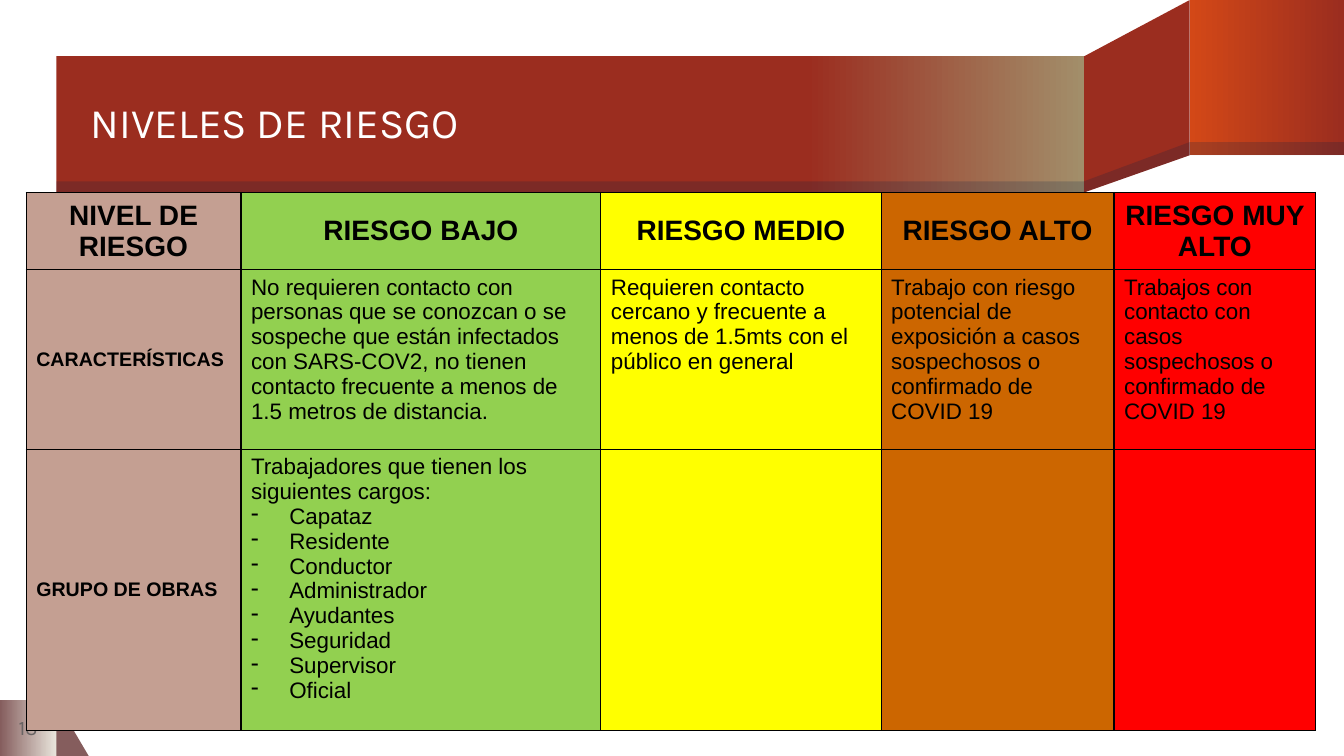
"""Build the risk level slide with its ribbon banner and table."""
from copy import deepcopy
from dataclasses import dataclass

from lxml.etree import SubElement
from pptx import Presentation
from pptx.dml.color import RGBColor as RGB
from pptx.enum.shapes import MSO_SHAPE as Kind
from pptx.enum.text import MSO_ANCHOR as Anchor, PP_ALIGN as Align
from pptx.oxml.ns import qn
from pptx.util import Inches, Pt


@dataclass(frozen=True)
class Theme:
    rust: str = "9B2D1F"
    flame: str = "D34817"
    sand: str = "A28E6A"
    plum: str = "855D5D"
    cream: str = "E9E5DC"
    shade: str = "001F46"
    white: str = "FFFFFF"
    black: str = "000000"
    gray: str = "696464"
    levels: tuple = ("C49F92", "92D050", "FFFF00", "CC6600", "FF0000")
    title: float = 30
    number: float = 14.7
    head: float = 20
    label: float = 14
    body: float = 16


def write(frame, text, size, color, font="Arial", bold=False, align=Align.LEFT, space=None, bullets=()):
    """Fill a text frame with one paragraph and optional dashed items."""
    frame.word_wrap = True
    for row, line in enumerate((text, *bullets)):
        para = frame.add_paragraph() if row else frame.paragraphs[0]
        para.alignment = align
        if space:
            para.line_spacing = space
        run = para.add_run()
        run.text = line
        run.font.size, run.font.name, run.font.bold = Pt(size), font, bold
        run.font.color.rgb = RGB.from_string(color)
        if row:
            props = para._p.get_or_add_pPr()
            props.set("marL", str(Inches(0.38)))
            props.set("indent", str(-Inches(0.38)))
            SubElement(props, qn("a:buChar"), char="-")


def paint(shape, color, end=None, hold=None, alpha=None):
    """Give a shape a flat, clear or graded fill without line or shadow."""
    shape.shadow.inherit = False
    shape.line.fill.background()
    if end:
        shape.fill.gradient()
        shape.fill.gradient_angle = 0
        for stop, tone in zip(shape.fill.gradient_stops, (color, end)):
            stop.color.rgb = RGB.from_string(tone)
    else:
        shape.fill.solid()
        shape.fill.fore_color.rgb = RGB.from_string(color)
    if hold:
        first = next(shape._element.iter(qn("a:gs")))
        middle = deepcopy(first)
        middle.set("pos", str(hold * 1000))
        first.addnext(middle)
    if alpha:
        tone = next(shape._element.iter(qn("a:srgbClr")))
        SubElement(tone, qn("a:alpha"), val=str(alpha * 1000))


theme = Theme()
deck = Presentation()
deck.slide_width, deck.slide_height = Inches(13.33), Inches(7.5)
slide = deck.slides.add_slide(deck.slide_layouts[6])
shapes = slide.shapes

dark = dict(color=theme.shade, alpha=20)
parts = [
    (Kind.RIGHT_TRIANGLE, (0.55, 6.94, 0.33, 0.56), dict(color=theme.plum)),
    (Kind.RECTANGLE, (0, 6.94, 0.56, 0.56), dict(color=theme.plum, end=theme.cream)),
    (None, ((11.8, 0), (10.75, 0.56), (10.75, 1.91), (11.8, 1.54)), dict(color=theme.rust)),
    (Kind.RECTANGLE, (11.8, 0, 1.53, 1.54), dict(color=theme.flame, end=theme.rust)),
    (Kind.RECTANGLE, (0.56, 0.56, 10.19, 1.35), dict(color=theme.rust, end=theme.sand, hold=73)),
    (None, ((11.8, 1.41), (10.75, 1.8), (10.75, 1.91), (11.8, 1.54)), dark),
    (Kind.RECTANGLE, (11.8, 1.41, 1.53, 0.13), dark),
    (Kind.RECTANGLE, (0.56, 1.8, 10.19, 0.11), dark),
]
for kind, place, look in parts:
    if kind:
        part = shapes.add_shape(kind, *map(Inches, place))
    else:
        points = [(Inches(x), Inches(y)) for x, y in place]
        path = shapes.build_freeform(*points[0])
        path.add_line_segments(points[1:], close=True)
        part = path.convert_to_shape()
    paint(part, **look)

labels = [
    ((0.9, 0.57, 9.85, 1.34), "NIVELES DE RIESGO", dict(size=theme.title, color=theme.white, space=0.9)),
    ((0, 6.94, 0.56, 0.56), "13", dict(size=theme.number, color=theme.gray, align=Align.CENTER)),
]
for place, text, look in labels:
    frame = shapes.add_textbox(*map(Inches, place)).text_frame
    frame.margin_left = frame.margin_right = frame.margin_top = frame.margin_bottom = 0
    frame.vertical_anchor = Anchor.MIDDLE
    write(frame, text, font="Karla", **look)

rows = [
    ("NIVEL DE RIESGO", "RIESGO BAJO", "RIESGO MEDIO", "RIESGO ALTO", "RIESGO MUY ALTO"),
    (
        "CARACTERÍSTICAS",
        "No requieren contacto con personas que se conozcan o se sospeche que están infectados "
        "con SARS-COV2, no tienen contacto frecuente a menos de 1.5 metros de distancia.",
        "Requieren contacto cercano y frecuente a menos de 1.5mts con el público en general",
        "Trabajo con riesgo potencial de exposición a casos sospechosos o confirmado de COVID 19",
        "Trabajos con contacto con casos sospechosos o confirmado de COVID 19",
    ),
    ("GRUPO DE OBRAS", "Trabajadores que tienen los siguientes cargos:", "", "", ""),
]
jobs = ("Capataz", "Residente", "Conductor", "Administrador", "Ayudantes", "Seguridad", "Supervisor", "Oficial")
widths, heights = (2.13, 3.57, 2.78, 2.31, 2), (0.73, 1.78, 2.79)
table = shapes.add_table(
    len(rows), len(widths), Inches(0.26), Inches(1.91), Inches(sum(widths)), Inches(sum(heights))
).table
for column, width in zip(table.columns, widths):
    column.width = Inches(width)
for row, height in zip(table.rows, heights):
    row.height = Inches(height)

for r, texts in enumerate(rows):
    for c, text in enumerate(texts):
        cell = table.cell(r, c)
        props = cell._tc.get_or_add_tcPr()
        for side in "LRTB":
            line = SubElement(props, qn(f"a:ln{side}"), w=str(Pt(1)))
            fill = SubElement(line, qn("a:solidFill"))
            SubElement(fill, qn("a:srgbClr"), val=theme.black)
        cell.fill.solid()
        cell.fill.fore_color.rgb = RGB.from_string(theme.levels[c])
        head, label = r == 0, c == 0
        cell.vertical_anchor = Anchor.MIDDLE if head or label else Anchor.TOP
        if text:
            write(
                cell.text_frame,
                text,
                theme.head if head else theme.label if label else theme.body,
                theme.black,
                bold=head or label,
                align=Align.CENTER if head else Align.LEFT,
                bullets=jobs if (r, c) == (2, 1) else (),
            )

deck.save("out.pptx")
